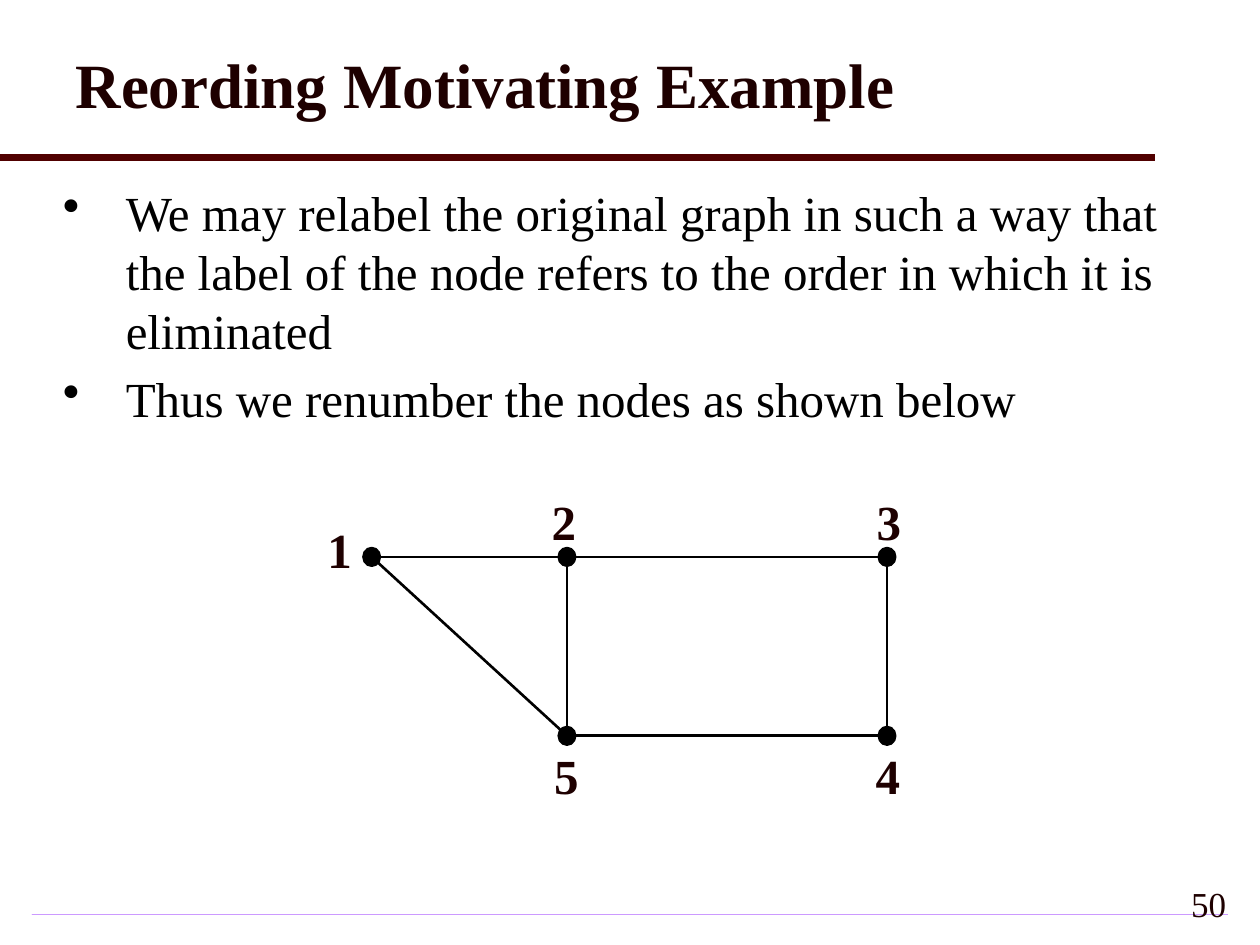
from lxml import etree
from pptx import Presentation
from pptx.dml.color import RGBColor
from pptx.enum.shapes import MSO_CONNECTOR, MSO_SHAPE
from pptx.enum.text import MSO_ANCHOR, PP_ALIGN
from pptx.oxml.ns import qn
from pptx.util import Inches, Pt

STRAIGHT = MSO_CONNECTOR.STRAIGHT
RECTANGLE, OVAL = MSO_SHAPE.RECTANGLE, MSO_SHAPE.OVAL
TOP, MIDDLE = MSO_ANCHOR.TOP, MSO_ANCHOR.MIDDLE
LEFT, RIGHT = PP_ALIGN.LEFT, PP_ALIGN.RIGHT

BLACK = RGBColor(0x00, 0x00, 0x00)
DARK = RGBColor(0x1E, 0x00, 0x00)
MAROON = RGBColor(0x50, 0x00, 0x00)
LILAC = RGBColor(0xCC, 0x99, 0xFF)
PALE_LILAC = RGBColor(0xF3, 0xEB, 0xFF)
FONT = "Times New Roman"

COLUMNS = (2.95, 4.5, 7.04)
ROWS = (4.42, 5.84)
DOT_WIDTH, DOT_HEIGHT = 0.13, 0.14
LABEL_WIDTH, LABEL_HEIGHT = 0.39, 0.41
NODES = {"1": (0, 0), "2": (1, 0), "3": (2, 0), "4": (2, 1), "5": (1, 1)}
LABEL_OFFSETS = {"1": (-0.45, -0.35), "2": (-0.22, -0.57), "3": (-0.18, -0.57),
                 "4": (-0.19, 0.03), "5": (-0.2, 0.03)}
EDGES = ("12", "23", "25", "34", "54", "15")
BULLETS = (
    "We may relabel the original graph in such a way that the label of the node "
    "refers to the order in which it is eliminated",
    "Thus we renumber the nodes as shown below",
)


def add_run(paragraph, words, size, color=DARK, bold=False):
    """Append one formatted run to a paragraph."""
    run = paragraph.add_run()
    run.text = words
    run.font.name = FONT
    run.font.size = Pt(size)
    run.font.bold = bold
    run.font.color.rgb = color


def add_frame(slide, box, anchor=TOP):
    """Add a wrapping text box and return its text frame."""
    frame = slide.shapes.add_textbox(*map(Inches, box)).text_frame
    frame.word_wrap = True
    frame.vertical_anchor = anchor
    return frame


def add_line(slide, start, end, color, width):
    """Draw a straight line without a shadow."""
    line = slide.shapes.add_connector(STRAIGHT, *map(Inches, (*start, *end)))
    line.line.color.rgb = color
    line.line.width = Pt(width)
    etree.SubElement(line._element.spPr, qn("a:effectLst"))


def add_title(slide, words):
    """Place and fill the title placeholder."""
    title = slide.shapes.title
    title.left, title.top, title.width, title.height = map(Inches, (0.5, 0.31, 9, 0.71))
    title.text_frame.vertical_anchor = MIDDLE
    paragraph = title.text_frame.paragraphs[0]
    paragraph.alignment = LEFT
    add_run(paragraph, words, 36, bold=True)


def add_bullets(slide, points):
    """Add the bulleted text with hanging indents."""
    frame = add_frame(slide, (0.4, 1.4, 9.17, 2.08))
    for index, point in enumerate(points):
        paragraph = frame.add_paragraph() if index else frame.paragraphs[0]
        properties = paragraph._p.get_or_add_pPr()
        properties.set("marL", str(Inches(0.5)))
        properties.set("indent", str(Inches(-0.5)))
        etree.SubElement(properties, qn("a:buChar"), char="•")
        if index:
            paragraph.space_before = Pt(5.6)
        add_run(paragraph, point, 28, BLACK)


def add_footer(slide, number):
    """Add the shaded footer rule and the slide number."""
    rule = slide.shapes.add_shape(RECTANGLE, *map(Inches, (0.25, 7.25, 9.5, 0.01)))
    rule.shadow.inherit = False
    rule.line.fill.background()
    rule.fill.gradient()
    for stop, color in zip(rule.fill.gradient_stops, (LILAC, PALE_LILAC)):
        stop.color.rgb = color
    gradient = rule._element.spPr.find(qn("a:gradFill"))
    gradient.remove(gradient.find(qn("a:lin")))
    center = etree.SubElement(gradient, qn("a:path"), path="shape")
    etree.SubElement(center, qn("a:fillToRect"),
                     {side: "50000" for side in "ltrb"})
    paragraph = add_frame(slide, (7.75, 6.92, 2.08, 0.5), MIDDLE).paragraphs[0]
    paragraph.alignment = RIGHT
    add_run(paragraph, number, 20)


def add_node(slide, label, center):
    """Draw a node dot with its number beside it."""
    x, y = center
    box = (x - DOT_WIDTH / 2, y - DOT_HEIGHT / 2, DOT_WIDTH, DOT_HEIGHT)
    dot = slide.shapes.add_shape(OVAL, *map(Inches, box))
    dot.shadow.inherit = False
    dot.fill.solid()
    dot.fill.fore_color.rgb = BLACK
    dot.line.color.rgb = BLACK
    dot.line.width = Pt(1.5)
    dx, dy = LABEL_OFFSETS[label]
    frame = add_frame(slide, (x + dx, y + dy, LABEL_WIDTH, LABEL_HEIGHT))
    add_run(frame.paragraphs[0], label, 28, bold=True)


def add_graph(slide):
    """Draw the nodes on their grid and the edges between them."""
    centers = {label: (COLUMNS[column], ROWS[row])
               for label, (column, row) in NODES.items()}
    for label, center in centers.items():
        add_node(slide, label, center)
    for start, end in EDGES:
        add_line(slide, centers[start], centers[end], BLACK, 1.5)


def main():
    """Build the slide and save it."""
    deck = Presentation()
    deck.slide_width, deck.slide_height = Inches(10), Inches(7.5)
    slide = deck.slides.add_slide(deck.slide_layouts[5])
    add_title(slide, "Reording Motivating Example")
    add_line(slide, (0, 1.25), (9.17, 1.25), MAROON, 4)
    add_footer(slide, "50")
    add_bullets(slide, BULLETS)
    add_graph(slide)
    deck.save("out.pptx")


if __name__ == "__main__":
    main()
